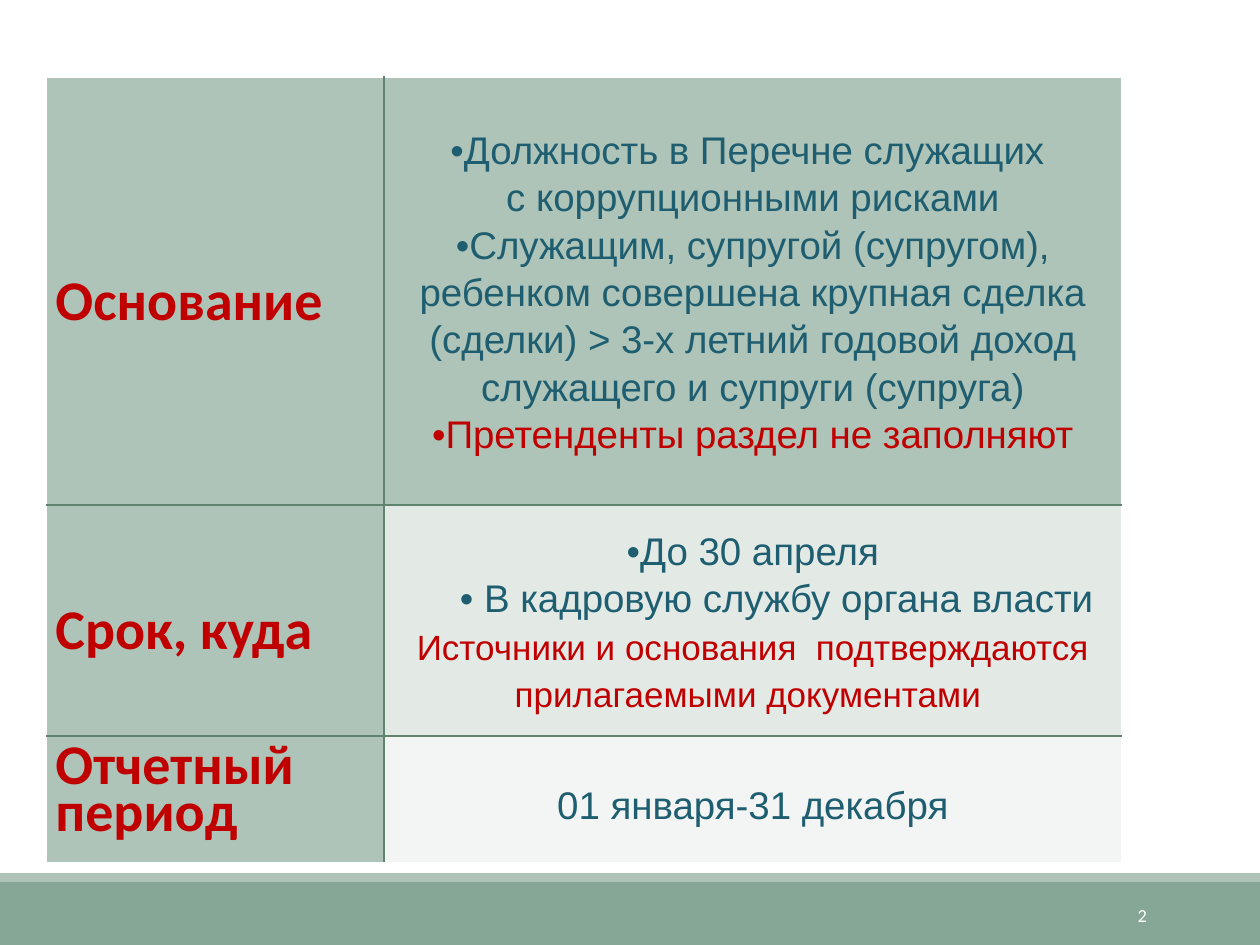
from dataclasses import dataclass

from lxml import etree
from pptx import Presentation
from pptx.dml.color import RGBColor
from pptx.enum.shapes import MSO_SHAPE
from pptx.enum.text import MSO_ANCHOR, PP_ALIGN
from pptx.oxml.ns import qn
from pptx.util import Inches, Pt

RECTANGLE = MSO_SHAPE.RECTANGLE
MIDDLE = MSO_ANCHOR.MIDDLE
LEFT, CENTER, RIGHT = PP_ALIGN.LEFT, PP_ALIGN.CENTER, PP_ALIGN.RIGHT


@dataclass(frozen=True)
class Theme:
    white: str = "FFFFFF"
    band: str = "86A795"
    sage: str = "AEC4B8"
    pale: str = "E3EAE6"
    paler: str = "F2F5F3"
    grid: str = "5F836F"
    teal: str = "1E5E70"
    red: str = "C00000"
    heading_font: str = "Calibri"
    body_font: str = "Arial"
    heading_size: float = 32
    body_size: float = 22
    note_size: float = 20
    number_size: float = 10.5
    tight: Pt = Pt(27)
    loose: float = 1.3
    outer_line: float = 1
    inner_line: float = 1.5


THEME = Theme()
HEADING = {"font": THEME.heading_font, "size": THEME.heading_size,
           "color": THEME.red, "bold": True, "align": LEFT,
           "spacing": THEME.loose}
BODY = {"font": THEME.body_font, "size": THEME.body_size,
        "color": THEME.teal, "bold": False, "align": CENTER,
        "spacing": THEME.tight}
BULLET = BODY | {"bullet": "•"}
NUMBER = {"font": THEME.heading_font, "size": THEME.number_size,
          "color": THEME.white, "bold": False, "align": RIGHT,
          "spacing": 1.0}

COLUMN_WIDTHS = (2.68, 5.85)
ROWS = (
    (3.4, THEME.sage,
     [("Основание", HEADING)],
     [("Должность в Перечне служащих \nс коррупционными рисками", BULLET),
      ("Служащим, супругой (супругом),\nребенком совершена крупная сделка "
       "(сделки) > 3-х летний годовой доход служащего и супруги (супруга)",
       BULLET),
      ("Претенденты раздел не заполняют", BULLET | {"color": THEME.red})]),
    (1.83, THEME.pale,
     [("Срок, куда", HEADING)],
     [("До 30 апреля", BULLET),
      (" В кадровую службу органа власти", BULLET | {"indent": 0.38}),
      ("Источники и основания  подтверждаются прилагаемыми документами ",
       BODY | {"size": THEME.note_size, "color": THEME.red})]),
    (1.01, THEME.paler,
     [("Отчетный период", HEADING | {"spacing": THEME.tight})],
     [("01 января-31 декабря", BODY | {"spacing": THEME.loose})]),
)


def set_attributes(target, values):
    for name, value in values.items():
        setattr(target, name, value)


def paint(fill, color):
    fill.solid()
    fill.fore_color.rgb = RGBColor.from_string(color)


def write_paragraph(paragraph, text, style):
    paragraph.text = text
    set_attributes(paragraph, {"alignment": style["align"],
                               "line_spacing": style["spacing"]})
    properties = paragraph._p.get_or_add_pPr()
    properties.set("marL", str(Inches(style.get("indent", 0))))
    properties.set("indent", "0")
    if "bullet" in style:
        etree.SubElement(properties, qn("a:buFont"), typeface=style["font"])
        etree.SubElement(properties, qn("a:buChar"), char=style["bullet"])
    for run in paragraph.runs:
        set_attributes(run.font, {"name": style["font"],
                                  "size": Pt(style["size"]),
                                  "bold": style["bold"]})
        run.font.color.rgb = RGBColor.from_string(style["color"])


def write_paragraphs(frame, paragraphs):
    for index, (text, style) in enumerate(paragraphs):
        paragraph = frame.add_paragraph() if index else frame.paragraphs[0]
        write_paragraph(paragraph, text, style)


def draw_borders(cell, outer_sides):
    properties = cell._tc.get_or_add_tcPr()
    for side, is_outer in outer_sides.items():
        width = THEME.outer_line if is_outer else THEME.inner_line
        color = THEME.white if is_outer else THEME.grid
        line = etree.SubElement(properties, qn(f"a:ln{side}"), w=str(Pt(width)))
        fill = etree.SubElement(line, qn("a:solidFill"))
        etree.SubElement(fill, qn("a:srgbClr"), val=color)


def fill_cell(cell, paragraphs, color, outer_sides):
    set_attributes(cell, {"vertical_anchor": MIDDLE,
                          "margin_left": Inches(0.07),
                          "margin_right": Inches(0.07),
                          "margin_top": 0, "margin_bottom": 0})
    draw_borders(cell, outer_sides)
    paint(cell.fill, color)
    write_paragraphs(cell.text_frame, paragraphs)


def add_requirements(slide, left, top):
    width = sum(COLUMN_WIDTHS)
    height = sum(row[0] for row in ROWS)
    table = slide.shapes.add_table(
        len(ROWS), len(COLUMN_WIDTHS), Inches(left), Inches(top),
        Inches(width), Inches(height)).table
    set_attributes(table, {"first_row": False, "horz_banding": False})
    for column, column_width in zip(table.columns, COLUMN_WIDTHS):
        column.width = Inches(column_width)
    for row, (row_height, color, topic, details) in enumerate(ROWS):
        table.rows[row].height = Inches(row_height)
        contents = ((topic, THEME.sage), (details, color))
        for column, (paragraphs, cell_color) in enumerate(contents):
            outer_sides = {"L": column == 0,
                           "R": column == len(COLUMN_WIDTHS) - 1,
                           "T": row == 0, "B": row == len(ROWS) - 1}
            fill_cell(table.cell(row, column), paragraphs, cell_color,
                      outer_sides)


def add_footer(slide, left, top, width, height):
    stripe = 0.07
    bands = ((top + stripe, height - stripe, THEME.band),
             (top, stripe, THEME.sage))
    for band_top, band_height, color in bands:
        band = slide.shapes.add_shape(
            RECTANGLE, Inches(left), Inches(band_top), Inches(width),
            Inches(band_height))
        band.shadow.inherit = False
        paint(band.fill, color)
        band.line.fill.background()
    number = slide.shapes.add_textbox(
        Inches(left + width - 1.88), Inches(top + 0.13), Inches(1.08),
        Inches(0.4))
    set_attributes(number.text_frame, {"word_wrap": True,
                                       "vertical_anchor": MIDDLE})
    write_paragraphs(number.text_frame, [("2", NUMBER)])


def main():
    presentation = Presentation()
    set_attributes(presentation, {"slide_width": Inches(10),
                                  "slide_height": Inches(7.5)})
    slide = presentation.slides.add_slide(presentation.slide_layouts[6])
    add_footer(slide, 0, 6.93, 10, 0.57)
    add_requirements(slide, 0.37, 0.61)
    presentation.save("out.pptx")


if __name__ == "__main__":
    main()
